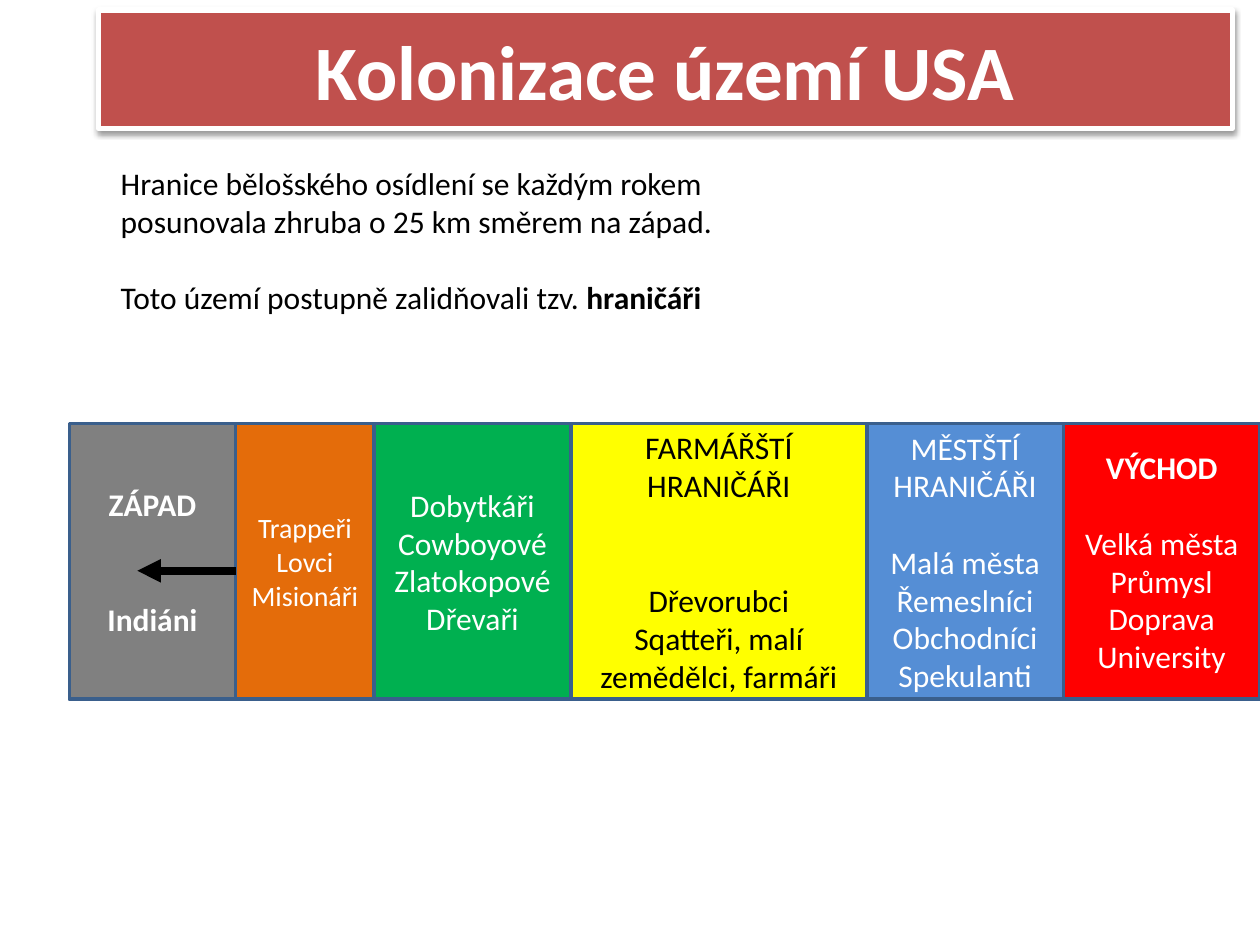
from dataclasses import dataclass
from itertools import accumulate

from lxml.etree import SubElement
from pptx import Presentation
from pptx.dml.color import RGBColor
from pptx.enum.shapes import MSO_CONNECTOR, MSO_SHAPE
from pptx.enum.text import MSO_ANCHOR, MSO_AUTO_SIZE, PP_ALIGN
from pptx.oxml import parse_xml
from pptx.oxml.ns import nsdecls, qn
from pptx.util import Inches, Pt

WHITE = RGBColor(0xFF, 0xFF, 0xFF)
BLACK = RGBColor(0x00, 0x00, 0x00)
TITLE_RED = RGBColor(0xC0, 0x50, 0x4D)
BORDER_BLUE = RGBColor(0x3A, 0x5F, 0x8C)
GRAY = RGBColor(0x80, 0x80, 0x80)
ORANGE = RGBColor(0xE4, 0x6C, 0x0A)
GREEN = RGBColor(0x00, 0xB0, 0x50)
YELLOW = RGBColor(0xFF, 0xFF, 0x00)
BLUE = RGBColor(0x55, 0x8E, 0xD5)
RED = RGBColor(0xFF, 0x00, 0x00)

BAND_LEFT, BAND_TOP, BAND_HEIGHT = 0.55, 3.36, 2.19
EMPTY_LINE = 22

TITLE_SHADOW = (
    f'<a:effectLst {nsdecls("a")}>'
    '<a:outerShdw blurRad="40000" dist="20000" dir="5400000" rotWithShape="0">'
    '<a:srgbClr val="000000"><a:alpha val="38000"/></a:srgbClr>'
    '</a:outerShdw></a:effectLst>'
)


@dataclass(frozen=True)
class Line:
    text: str
    bold: bool = False
    gap_lines: int = 0


@dataclass(frozen=True)
class Zone:
    width: float
    fill: RGBColor
    lines: tuple[Line, ...]
    size: int = 18
    color: RGBColor = WHITE


ZONES = (
    Zone(1.32, GRAY, (Line("ZÁPAD", True), Line("Indiáni", True, 2))),
    Zone(1.10, ORANGE, (Line("Trappeři"), Line("Lovci"), Line("Misionáři")), 16),
    Zone(1.56, GREEN, (Line("Dobytkáři"), Line("Cowboyové"),
                       Line("Zlatokopové"), Line("Dřevaři"))),
    Zone(2.35, YELLOW, (Line("FARMÁŘŠTÍ HRANIČÁŘI"), Line("Dřevorubci", gap_lines=2),
                        Line("Sqatteři, malí zemědělci, farmáři")), color=BLACK),
    Zone(1.56, BLUE, (Line("MĚSTŠTÍ HRANIČÁŘI"), Line("Malá města", gap_lines=1),
                      Line("Řemeslníci"), Line("Obchodníci"), Line("Spekulanti"))),
    Zone(1.56, RED, (Line("VÝCHOD", True), Line("Velká města", gap_lines=1),
                     Line("Průmysl"), Line("Doprava"), Line("University"))),
)


def add_run(paragraph, text: str, size: int, color: RGBColor, bold: bool = False) -> None:
    run = paragraph.add_run()
    run.text = text
    font_format = {"name": "Calibri", "size": Pt(size), "bold": bold}
    for attribute, value in font_format.items():
        setattr(run.font, attribute, value)
    run.font.color.rgb = color


def next_paragraph(text_frame, index: int):
    return text_frame.paragraphs[0] if index == 0 else text_frame.add_paragraph()


def paint(shape, fill: RGBColor, line: RGBColor, line_width: float) -> None:
    shape.fill.solid()
    shape.fill.fore_color.rgb = fill
    shape.line.color.rgb = line
    shape.line.width = Pt(line_width)


def add_title(slide) -> None:
    title = slide.shapes.title
    position = {"left": 0.78, "top": 0.08, "width": 9, "height": 0.94}
    for attribute, value in position.items():
        setattr(title, attribute, Inches(value))
    paint(title, TITLE_RED, WHITE, 3)
    title._element.spPr.append(parse_xml(TITLE_SHADOW))
    text_frame = title.text_frame
    frame_format = {"auto_size": MSO_AUTO_SIZE.NONE, "word_wrap": True,
                    "vertical_anchor": MSO_ANCHOR.MIDDLE}
    for attribute, value in frame_format.items():
        setattr(text_frame, attribute, value)
    text_frame.paragraphs[0].alignment = PP_ALIGN.CENTER
    add_run(text_frame.paragraphs[0], "Kolonizace území USA", 44, WHITE, True)


def add_introduction(slide) -> None:
    text_box = slide.shapes.add_textbox(Inches(0.86), Inches(1.25), Inches(4.92), Inches(1.31))
    text_frame = text_box.text_frame
    text_frame.word_wrap = True
    frontier = text_frame.paragraphs[0]
    add_run(frontier, "Hranice bělošského osídlení se každým rokem posunovala "
                      "zhruba o 25 km směrem na západ.", 18, BLACK)
    settlers = text_frame.add_paragraph()
    settlers.space_before = Pt(EMPTY_LINE)
    add_run(settlers, "Toto území postupně zalidňovali tzv. ", 18, BLACK)
    add_run(settlers, "hraničáři", 18, BLACK, True)


def add_zone(slide, zone: Zone, left: float) -> None:
    shape = slide.shapes.add_shape(MSO_SHAPE.RECTANGLE, Inches(left), Inches(BAND_TOP),
                                   Inches(zone.width), Inches(BAND_HEIGHT))
    shape.shadow.inherit = False
    paint(shape, zone.fill, BORDER_BLUE, 2)
    text_frame = shape.text_frame
    text_frame.word_wrap = True
    text_frame.vertical_anchor = MSO_ANCHOR.MIDDLE
    for index, line in enumerate(zone.lines):
        paragraph = next_paragraph(text_frame, index)
        paragraph.alignment = PP_ALIGN.CENTER
        if line.gap_lines:
            paragraph.space_before = Pt(EMPTY_LINE * line.gap_lines)
        add_run(paragraph, line.text, zone.size, zone.color, line.bold)


def add_westward_arrow(slide) -> None:
    arrow = slide.shapes.add_connector(MSO_CONNECTOR.STRAIGHT, Inches(1.87), Inches(4.53),
                                       Inches(1.09), Inches(4.53))
    arrow.line.color.rgb = BLACK
    arrow.line.width = Pt(4.5)
    SubElement(arrow.line._get_or_add_ln(), qn("a:tailEnd"), type="triangle")
    SubElement(arrow._element.spPr, qn("a:effectLst"))


def main() -> None:
    presentation = Presentation()
    presentation.slide_width = Inches(10)
    presentation.slide_height = Inches(7.5)
    slide = presentation.slides.add_slide(presentation.slide_layouts.get_by_name("Title Only"))
    add_title(slide)
    add_introduction(slide)
    lefts = accumulate((zone.width for zone in ZONES[:-1]), initial=BAND_LEFT)
    for zone, left in reversed(list(zip(ZONES, lefts))):
        add_zone(slide, zone, left)
    add_westward_arrow(slide)
    presentation.save("out.pptx")


if __name__ == "__main__":
    main()
